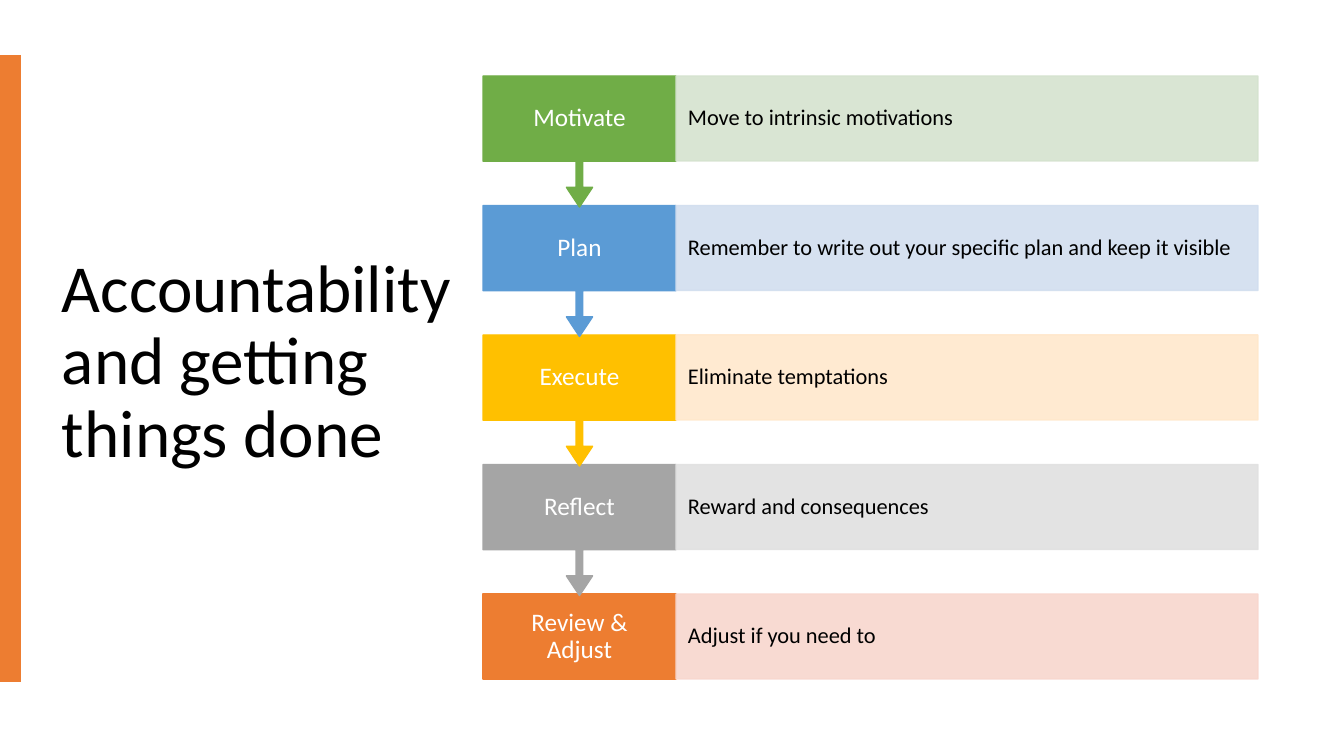
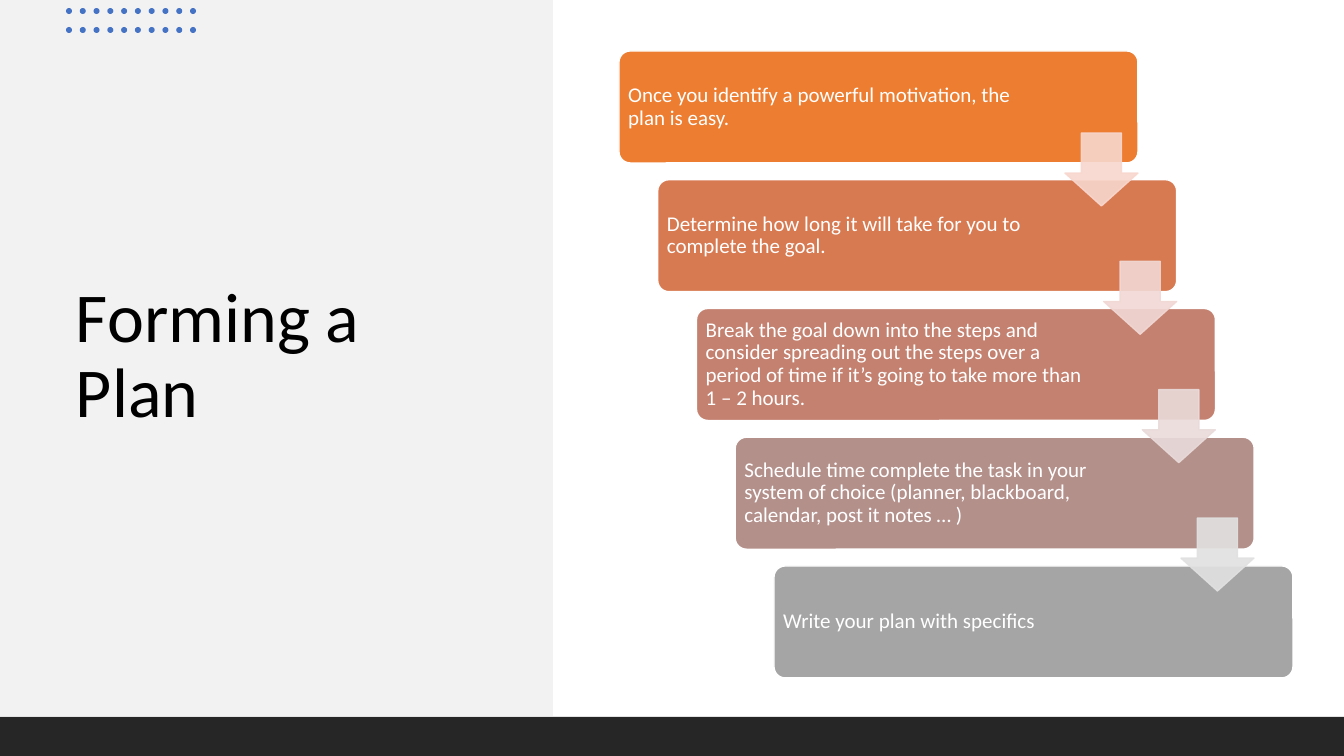
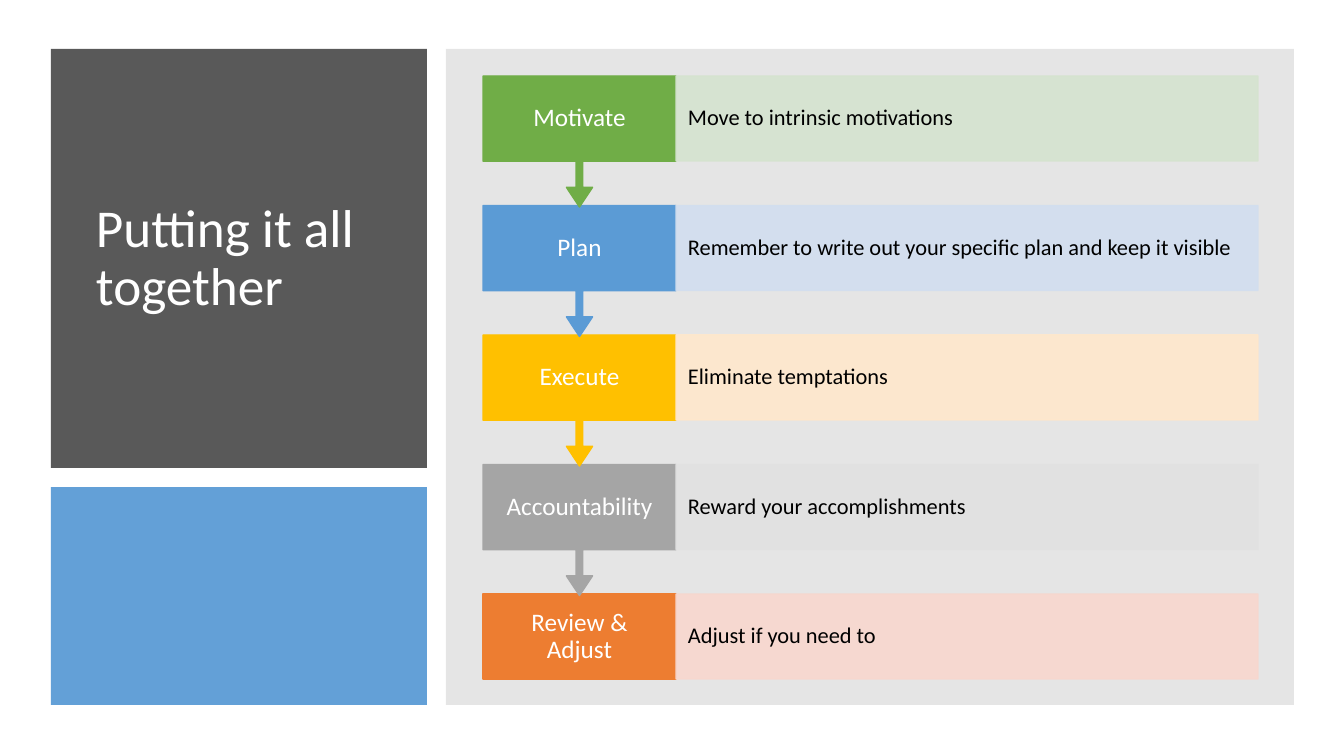
"""Build three slides on accountability, planning and putting it all together."""
from lxml import etree
from pptx import Presentation
from pptx.dml.color import RGBColor
from pptx.enum.shapes import MSO_SHAPE
from pptx.enum.text import MSO_ANCHOR, MSO_AUTO_SIZE, PP_ALIGN
from pptx.oxml.ns import qn
from pptx.util import Emu, Pt

RECT = MSO_SHAPE.RECTANGLE
ROUNDED = MSO_SHAPE.ROUNDED_RECTANGLE
OVAL = MSO_SHAPE.OVAL
DOWN_ARROW = MSO_SHAPE.DOWN_ARROW
CALLOUT = MSO_SHAPE.DOWN_ARROW_CALLOUT
MIDDLE, BOTTOM = MSO_ANCHOR.MIDDLE, MSO_ANCHOR.BOTTOM
LEFT, CENTER = PP_ALIGN.LEFT, PP_ALIGN.CENTER

PX = 914400 / 100.8
FONT = "Calibri"
BLACK, WHITE = "000000", "FFFFFF"
ORANGE, GRAY, BLUE = "ED7D31", "A5A5A5", "5B9BD5"

STEP_COLORS = [
    ("70AD47", "D5E3CF"),
    (BLUE, "D2DEEF"),
    ("FFC000", "FFE8CC"),
    (GRAY, "E1E1E1"),
    (ORANGE, "F8D7CE"),
]
COMMON_STEPS = [
    ("Motivate", "Move to intrinsic motivations"),
    ("Plan", "Remember to write out your specific plan and keep it visible"),
    ("Execute", "Eliminate temptations"),
]
LAST_STEP = ("Review & Adjust", "Adjust if you need to")
GETTING_DONE = COMMON_STEPS + [("Reflect", "Reward and consequences"), LAST_STEP]
TOGETHER = COMMON_STEPS + [("Accountability", "Reward your accomplishments"), LAST_STEP]

PLAN_STAIRS = [
    ("Once you identify a powerful motivation, the plan is easy.", ORANGE),
    ("Determine how long it will take for you to complete the goal.", "D87A51"),
    ("Break the goal down into the steps and consider spreading out the steps "
     "over a period of time if it’s going to take more than 1 – 2 hours.", "C48170"),
    ("Schedule time complete the task in your system of choice "
     "(planner, blackboard, calendar, post it notes … )", "B4908B"),
    ("Write your plan with specifics", GRAY),
]
STAIR_ARROWS = ["F8D7CE", "F1D8D4", "E9DBDA", "E1E1E1"]


def px(length):
    return Emu(round(length * PX))


def color(code):
    return RGBColor.from_string(code)


def spread(first, last, count):
    return [first + (last - first) * i / (count - 1) for i in range(count)]


def set_text(shape, text, size, ink, align=LEFT, anchor=MIDDLE, insets=(10, 5, 10, 5)):
    frame = shape.text_frame
    frame.text = text
    frame.word_wrap = True
    frame.auto_size = MSO_AUTO_SIZE.NONE
    frame.vertical_anchor = anchor
    frame.margin_left, frame.margin_top, frame.margin_right, frame.margin_bottom = map(px, insets)
    para = frame.paragraphs[0]
    para.alignment = align
    para.line_spacing = 0.9
    font = para.runs[0].font
    font.name, font.size, font.color.rgb = FONT, Pt(size), color(ink)


def add_shape(page, kind, box, fill, line=None, alpha=100, adjust=()):
    shape = page.shapes.add_shape(kind, *map(px, box))
    shape.shadow.inherit = False
    shape.fill.solid()
    shape.fill.fore_color.rgb = color(fill)
    if line:
        shape.line.color.rgb = color(line)
        shape.line.width = Pt(1)
    else:
        shape.line.fill.background()
    for i, value in enumerate(adjust):
        shape.adjustments[i] = value
    if alpha < 100:
        for tint in shape.element.spPr.iter(qn("a:srgbClr")):
            etree.SubElement(tint, qn("a:alpha")).set("val", str(alpha * 1000))
    return shape


def add_page(deck, title, box, size, ink=BLACK, anchor=MIDDLE, blocks=()):
    page = deck.slides.add_slide(deck.slide_layouts[5])
    for place, fill, alpha in blocks:
        add_shape(page, RECT, place, fill, alpha=alpha)
    holder = page.shapes.title
    holder.left, holder.top, holder.width, holder.height = map(px, box)
    set_text(holder, title, size, ink, anchor=anchor)
    holder.element.getparent().append(holder.element)
    return page


def add_steps(page, steps):
    tops = spread(76, 594, len(steps))
    rows = list(zip(steps, STEP_COLORS, tops))
    for (label, detail), (strong, pale), top in reversed(rows):
        if top == tops[-1]:
            head = add_shape(page, RECT, (483, top, 193, 85), strong, strong)
        else:
            head = add_shape(page, CALLOUT, (483, top, 193, 131), strong, strong,
                             adjust=(0.05, 0.1, 0.15, 0.65))
        set_text(head, label, 18, WHITE, CENTER, insets=(14, 14, 14, 14))
        bar = add_shape(page, RECT, (676, top, 582, 85), pale, pale, alpha=90)
        set_text(bar, detail, 16, BLACK, insets=(12, 22, 12, 22))


def add_dots(page):
    for left in spread(66, 190, 10):
        for top in (8, 27):
            add_shape(page, OVAL, (left, top, 6, 6), "4472C4")


def add_stairs(page):
    count = len(PLAN_STAIRS)
    places = zip(spread(619, 774, count), spread(51, 566, count))
    for (text, fill), (left, top) in zip(PLAN_STAIRS, places):
        stair = add_shape(page, ROUNDED, (left, top, 519, 112), fill, WHITE, adjust=(0.1,))
        set_text(stair, text, 15, WHITE, insets=(6, 6, 124, 6))
    count = len(STAIR_ARROWS)
    for fill, left, top in zip(STAIR_ARROWS, spread(1065, 1181, count), spread(133, 518, count)):
        add_shape(page, DOWN_ARROW, (left, top, 73, 73), fill, fill, alpha=90, adjust=(0.55, 0.45))


def main():
    deck = Presentation()
    deck.slide_width, deck.slide_height = px(1344), px(756)

    done = add_page(deck, "Accountability and getting things done", (52, 124, 444, 353), 48,
                    anchor=BOTTOM, blocks=[((0, 55, 21, 627), ORANGE, 100)])
    add_steps(done, GETTING_DONE)

    plan = add_page(deck, "Forming a Plan", (66, 133, 427, 449), 50,
                    blocks=[((0, 0, 553, 716), "F2F2F2", 100),
                            ((0, 717, 1344, 39), "262626", 100)])
    add_dots(plan)
    add_stairs(plan)

    together = add_page(deck, "Putting it all together", (86, 81, 313, 357), 38, WHITE,
                        blocks=[((51, 49, 376, 419), "595959", 100),
                                ((51, 487, 376, 218), BLUE, 95),
                                ((446, 49, 848, 656), "808080", 20)])
    add_steps(together, TOGETHER)

    deck.save("out.pptx")


if __name__ == "__main__":
    main()
